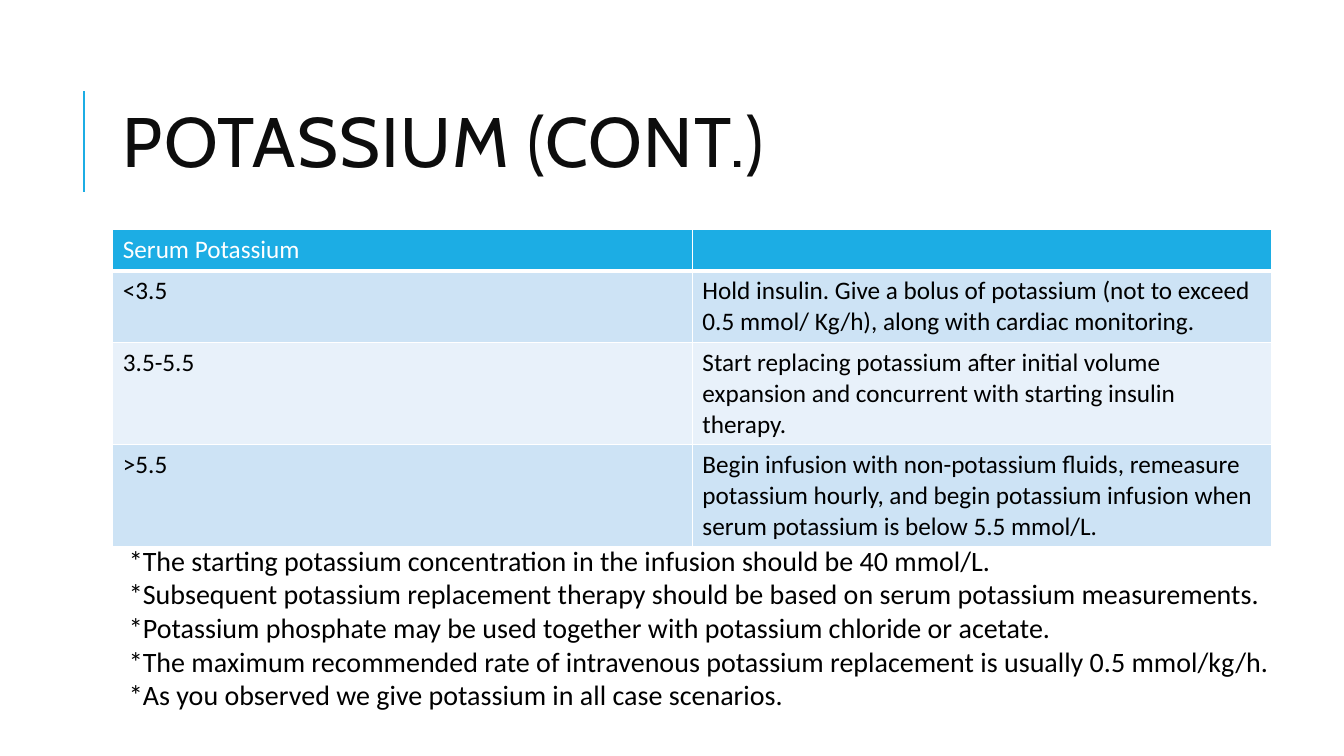
import dataclasses

import pptx
import pptx.dml.color
import pptx.enum.shapes
import pptx.enum.text
import pptx.oxml.ns
import pptx.util
from lxml import etree

Pt = pptx.util.Pt


@dataclasses.dataclass(frozen=True)
class Theme:
    accent: str = "1CADE4"
    title_ink: str = "0D0D0D"
    ink: str = "000000"
    white: str = "FFFFFF"
    bands: tuple = ("CDE3F5", "E8F1FA")
    title_font: str = "Cabin"
    body_font: str = "Calibri"
    title_size: float = 50
    table_size: float = 18
    note_size: float = 20
    rule_width: float = 1.5
    border_width: float = 1
    header_border_width: float = 3


THEME = Theme()

DOSING_ROWS = (
    ("Serum Potassium", ""),
    ("<3.5", "Hold insulin. Give a bolus of potassium (not to exceed 0.5 mmol/ Kg/h), "
             "along with cardiac monitoring."),
    ("3.5-5.5", "Start replacing potassium after initial volume expansion and "
                "concurrent with starting insulin therapy."),
    (">5.5", "Begin infusion with non-potassium fluids, remeasure potassium hourly, "
             "and begin potassium infusion when serum potassium is below 5.5 mmol/L."),
)
ROW_HEIGHTS = (29.2, 51.2, 73.1, 73.1)

NOTES = (
    "*The starting potassium concentration in the infusion should be 40 mmol/L.",
    "*Subsequent potassium replacement therapy should be based on serum potassium measurements.",
    "*Potassium phosphate may be used together with potassium chloride or acetate.",
    "*The maximum recommended rate of intravenous potassium replacement is usually 0.5 mmol/kg/h.",
    "*As you observed we give potassium in all case scenarios.",
)


def rgb(value):
    return pptx.dml.color.RGBColor.from_string(value)


def add_element(parent, tag, **attributes):
    return etree.SubElement(parent, pptx.oxml.ns.qn(tag), attributes)


def style_text(frame, font, size, color):
    for para in frame.paragraphs:
        for span in para.runs:
            span.font.name = font
            span.font.size = Pt(size)
            span.font.bold = False
            span.font.color.rgb = rgb(color)


def add_title(page, left, top, width, height, text):
    rule_left, rule_top = left - 20.6, top + 18.7
    rule = page.shapes.add_connector(
        pptx.enum.shapes.MSO_CONNECTOR.STRAIGHT,
        Pt(rule_left), Pt(rule_top + 72), Pt(rule_left), Pt(rule_top))
    rule.line.color.rgb = rgb(THEME.accent)
    rule.line.width = Pt(THEME.rule_width)
    add_element(rule.element.spPr, "a:effectLst")

    box = page.shapes.add_textbox(Pt(left), Pt(top), Pt(width), Pt(height))
    frame = box.text_frame
    frame.word_wrap = True
    frame.vertical_anchor = pptx.enum.text.MSO_ANCHOR.MIDDLE
    frame.text = text
    para = frame.paragraphs[0]
    para.line_spacing = 0.8
    style_text(frame, THEME.title_font, THEME.title_size, THEME.title_ink)
    para.runs[0].font._element.set("spc", "100")


def add_borders(cell, top_width, bottom_width):
    properties = cell._tc.get_or_add_tcPr()
    widths = {"L": THEME.border_width, "R": THEME.border_width,
              "T": top_width, "B": bottom_width}
    for side, width in widths.items():
        line = add_element(properties, f"a:ln{side}", w=str(Pt(width)))
        fill = add_element(line, "a:solidFill")
        add_element(fill, "a:srgbClr", val=THEME.white)


def add_dosing_table(page, left, top, width):
    table = page.shapes.add_table(
        len(DOSING_ROWS), 2, Pt(left), Pt(top), Pt(width), Pt(sum(ROW_HEIGHTS))).table
    for column in table.columns:
        column.width = Pt(width / 2)
    for index, (texts, height) in enumerate(zip(DOSING_ROWS, ROW_HEIGHTS)):
        table.rows[index].height = Pt(height)
        header = index == 0
        fill = THEME.accent if header else THEME.bands[(index - 1) % 2]
        color = THEME.white if header else THEME.ink
        bottom = THEME.header_border_width if header else THEME.border_width
        for cell, text in zip(table.rows[index].cells, texts):
            add_borders(cell, THEME.border_width, bottom)
            cell.fill.solid()
            cell.fill.fore_color.rgb = rgb(fill)
            cell.text_frame.text = text
            style_text(cell.text_frame, THEME.body_font, THEME.table_size, color)


def add_notes_list(page, left, top, width, height):
    box = page.shapes.add_textbox(Pt(left), Pt(top), Pt(width), Pt(height))
    frame = box.text_frame
    frame.word_wrap = True
    frame.auto_size = pptx.enum.text.MSO_AUTO_SIZE.SHAPE_TO_FIT_TEXT
    frame.text = "\n".join(NOTES)
    style_text(frame, THEME.body_font, THEME.note_size, THEME.ink)


def main():
    deck = pptx.Presentation()
    deck.slide_width, deck.slide_height = Pt(960), Pt(540)
    page = deck.slides.add_slide(deck.slide_layouts[6])
    add_title(page, 80.6, 46.1, 765.4, 118.1, "POTASSIUM (CONT.)")
    add_dosing_table(page, 80.6, 164.2, 828)
    add_notes_list(page, 85, 384.5, 875, 128.2)
    deck.save("out.pptx")


if __name__ == "__main__":
    main()
